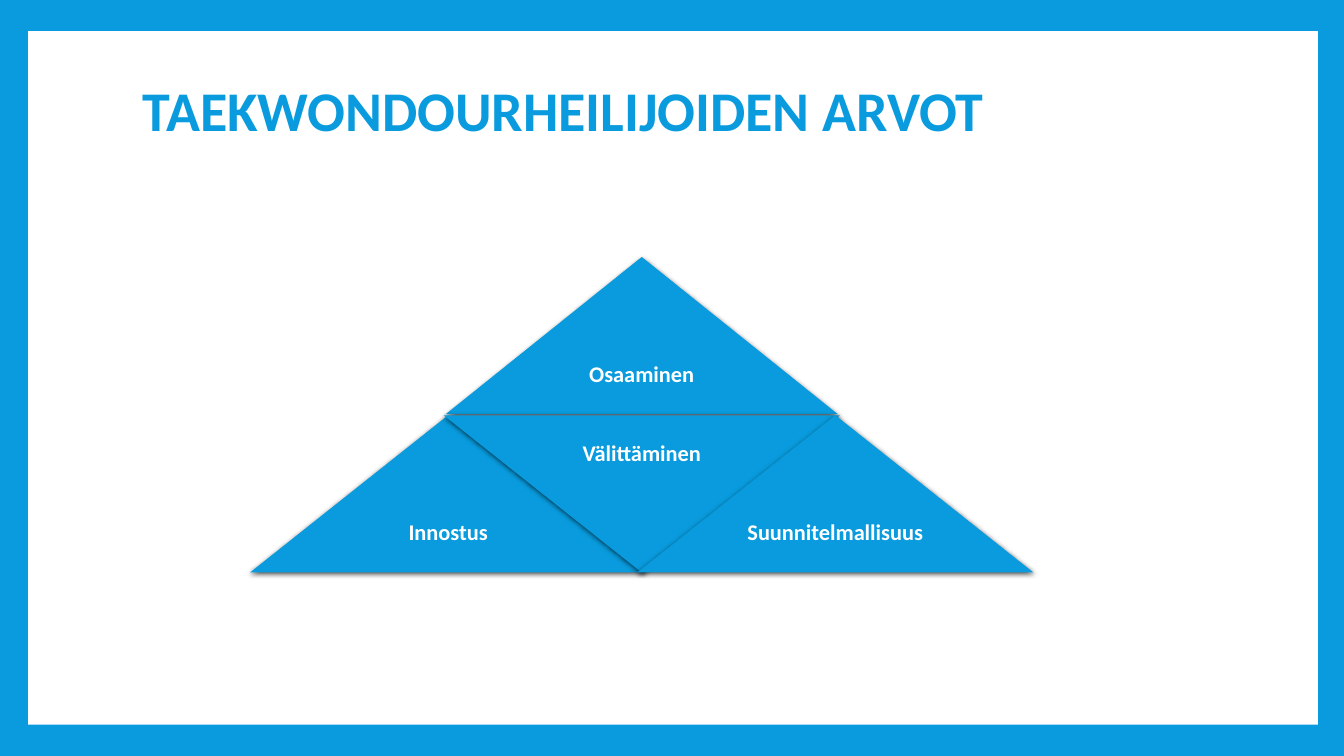
"""Build a slide with a pyramid of four athlete values."""
from dataclasses import dataclass

from lxml import etree
from pptx import Presentation, util as u
from pptx.dml.color import RGBColor
from pptx.enum import shapes, text
from pptx.oxml.ns import qn
from pptx.shapes.autoshape import Shape
from pptx.slide import Slide


@dataclass(frozen=True)
class Theme:
    blue: str = "099BDD"
    white: str = "FFFFFF"
    shadow: str = "000000"
    font: str = "Calibri"
    title_size: int = 40
    label_size: int = 16


@dataclass(frozen=True)
class Box:
    left: float
    top: float
    width: float
    height: float

    def emu(self) -> tuple[int, ...]:
        return tuple(u.Inches(v) for v in (self.left, self.top, self.width, self.height))


@dataclass(frozen=True)
class Grid:
    left: float = 2.48
    top: float = 2.55
    column: float = 1.92
    row: float = 1.57
    width: float = 3.93
    height: float = 1.56

    def cell(self, col: int, row: int, trim: float) -> Box:
        return Box(self.left + col * self.column + trim / 2, self.top + row * self.row,
                   self.width - trim, self.height)


@dataclass(frozen=True)
class Value:
    name: str
    col: int
    row: int
    inverted: bool = False
    trim: float = 0


THEME = Theme()
GRID = Grid()
VALUES = (
    Value("Osaaminen", 1, 0, trim=0.04),
    Value("Innostus", 0, 1),
    Value("Välittäminen", 1, 1, inverted=True),
    Value("Suunnitelmallisuus", 2, 1),
)


def add_filled(s: Slide, kind: shapes.MSO_SHAPE, box: Box, color: str) -> Shape:
    """Add a borderless shape with a solid fill."""
    sp = s.shapes.add_shape(kind, *box.emu())
    sp.shadow.inherit = False
    sp.fill.solid()
    sp.fill.fore_color.rgb = RGBColor.from_string(color)
    sp.line.fill.background()
    return sp


def add_shadow(sp: Shape) -> None:
    """Give a shape a soft shadow that falls straight down."""
    effects = sp._element.spPr.find(qn("a:effectLst"))
    outer = etree.SubElement(effects, qn("a:outerShdw"), blurRad=str(u.Pt(4)),
                             dist=str(u.Pt(1.2)), dir="5400000", algn="ctr", rotWithShape="0")
    color = etree.SubElement(outer, qn("a:srgbClr"), val=THEME.shadow)
    etree.SubElement(color, qn("a:alpha"), val="68000")


def add_text(s: Slide, content: str, box: Box, *, size: int, color: str,
             align: text.PP_ALIGN = text.PP_ALIGN.LEFT, spacing: float = 0.9,
             inset_x: float = 0.07, inset_y: float = 0.07) -> None:
    """Add a bold, vertically centred line of text."""
    tf = s.shapes.add_textbox(*box.emu()).text_frame
    tf.word_wrap = True
    tf.vertical_anchor = text.MSO_ANCHOR.MIDDLE
    tf.margin_left = tf.margin_right = u.Inches(inset_x)
    tf.margin_top = tf.margin_bottom = u.Inches(inset_y)
    p = tf.paragraphs[0]
    p.alignment = align
    p.line_spacing = spacing
    r = p.add_run()
    r.text = content
    r.font.name = THEME.font
    r.font.size = u.Pt(size)
    r.font.bold = True
    r.font.color.rgb = RGBColor.from_string(color)


def add_value(s: Slide, value: Value) -> None:
    """Draw a triangle and its label in the wide half."""
    box = GRID.cell(value.col, value.row, value.trim)
    sp = add_filled(s, shapes.MSO_SHAPE.ISOSCELES_TRIANGLE, box, THEME.blue)
    sp.rotation = 180 if value.inverted else 0
    add_shadow(sp)
    half = box.height / 2
    label = Box(box.left + box.width / 4, box.top + (0 if value.inverted else half),
                box.width / 2, half)
    add_text(s, value.name, label, size=THEME.label_size, color=THEME.white,
             align=text.PP_ALIGN.CENTER)


def main() -> None:
    """Assemble and save the slide."""
    prs = Presentation()
    prs.slide_width, prs.slide_height = u.Inches(13.33), u.Inches(7.5)
    s = prs.slides.add_slide(prs.slide_layouts[6])
    s.background.fill.solid()
    s.background.fill.fore_color.rgb = RGBColor.from_string(THEME.blue)
    add_filled(s, shapes.MSO_SHAPE.RECTANGLE, Box(0.28, 0.31, 12.79, 6.88), THEME.white)
    add_text(s, "TAEKWONDOURHEILIJOIDEN ARVOT", Box(1.32, 0.31, 10.7, 1.65),
             size=THEME.title_size, color=THEME.blue, spacing=0.85, inset_x=0.1, inset_y=0.05)
    for value in VALUES:
        add_value(s, value)
    prs.save("out.pptx")


if __name__ == "__main__":
    main()
